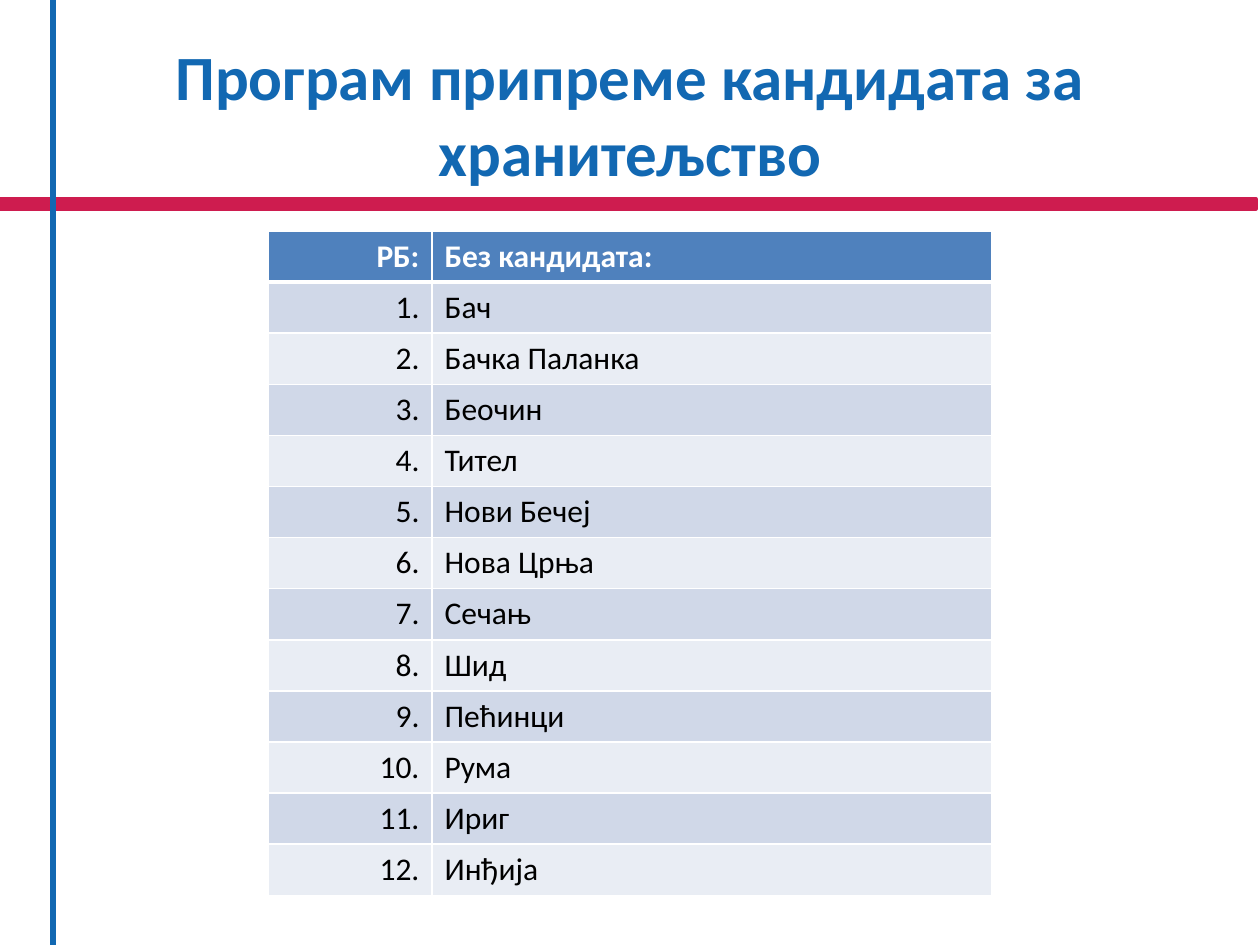
from pptx import Presentation
from pptx.dml.color import RGBColor
from pptx.enum.shapes import MSO_CONNECTOR, MSO_SHAPE
from pptx.enum.text import MSO_ANCHOR, PP_ALIGN
from pptx.oxml import parse_xml
from pptx.oxml.ns import nsdecls
from pptx.util import Emu, Pt

EMU_PER_PX = 914400 / 126
WIDTH, HEIGHT = 1260, 945

WHITE = RGBColor(0xFF, 0xFF, 0xFF)
BLACK = RGBColor(0x00, 0x00, 0x00)
BLUE = RGBColor(0x12, 0x68, 0xB2)
RED = RGBColor(0xCE, 0x1C, 0x4F)
HEADER_FILL = RGBColor(0x4F, 0x81, 0xBD)
BAND_FILLS = RGBColor(0xD0, 0xD8, 0xE8), RGBColor(0xE9, 0xED, 0xF4)

FONT = "Calibri"
TITLE = {"size": Pt(36), "bold": True}
HEADER = {"size": Pt(18), "bold": True}
BODY = {"size": Pt(18), "bold": False}

MUNICIPALITIES = [
    "Бач", "Бачка Паланка", "Беочин", "Тител", "Нови Бечеј", "Нова Црња",
    "Сечањ", "Шид", "Пећинци", "Рума", "Ириг", "Инђија",
]


def px(*lengths):
    return [Emu(round(length * EMU_PER_PX)) for length in lengths]


class SlideBuilder:
    def __init__(self, deck, font):
        self.font = font
        self.slide = deck.slides.add_slide(deck.slide_layouts[5])

    def add_text(self, frame, text, style, color, align):
        para = frame.paragraphs[0]
        para.alignment = align
        span = para.add_run()
        span.text = text
        span.font.name = self.font
        span.font.color.rgb = color
        for name, value in style.items():
            setattr(span.font, name, value)

    def title(self, text, left, top, width, height):
        box = self.slide.shapes.title
        box.left, box.top, box.width, box.height = px(left, top, width, height)
        box.text_frame.word_wrap = True
        box.text_frame.vertical_anchor = MSO_ANCHOR.MIDDLE
        self.add_text(box.text_frame, text, TITLE, BLUE, PP_ALIGN.CENTER)

    def bar(self, left, top, width, height, color):
        box = self.slide.shapes.add_shape(
            MSO_SHAPE.RECTANGLE, *px(left, top, width, height))
        box.shadow.inherit = False
        box.fill.solid()
        box.fill.fore_color.rgb = color
        box.line.color.rgb = color
        box.line.width = Pt(2)

    def line(self, x1, y1, x2, y2, color, weight):
        rule = self.slide.shapes.add_connector(
            MSO_CONNECTOR.STRAIGHT, *px(x1, y1, x2, y2))
        rule.line.color.rgb = color
        rule.line.width = Pt(weight)
        rule._element.spPr.append(
            parse_xml(f"<a:effectLst {nsdecls('a')}/>"))

    def cell_borders(self, cell, weights):
        """Insert white borders ahead of the fill; weights maps side to points."""
        props = cell._tc.get_or_add_tcPr()
        for index, (side, weight) in enumerate(weights.items()):
            props.insert(index, parse_xml(
                f'<a:ln{side} {nsdecls("a")} w="{Pt(weight)}"><a:solidFill>'
                f'<a:srgbClr val="{WHITE}"/></a:solidFill></a:ln{side}>'))

    def table(self, rows, left, top, column_widths, row_height):
        frame = self.slide.shapes.add_table(
            len(rows), len(column_widths),
            *px(left, top, sum(column_widths), row_height * len(rows)))
        grid = frame.table
        for column, width in zip(grid.columns, px(*column_widths)):
            column.width = width
        aligns = PP_ALIGN.RIGHT, PP_ALIGN.LEFT
        for index, values in enumerate(rows):
            grid.rows[index].height = px(row_height)[0]
            is_header = index == 0
            style, color = (HEADER, WHITE) if is_header else (BODY, BLACK)
            fill = HEADER_FILL if is_header else BAND_FILLS[(index - 1) % 2]
            weights = {"L": 1, "R": 1, "T": 3 if index == 1 else 1,
                       "B": 3 if is_header else 1}
            for cell, text, align in zip(grid.rows[index].cells, values, aligns):
                cell.fill.solid()
                cell.fill.fore_color.rgb = fill
                self.cell_borders(cell, weights)
                self.add_text(cell.text_frame, text, style, color, align)


def main():
    deck = Presentation()
    deck.slide_width, deck.slide_height = px(WIDTH, HEIGHT)
    page = SlideBuilder(deck, FONT)
    page.bar(-4, 199, WIDTH, 10, RED)
    page.line(53, 0, 53, HEIGHT, BLUE, 3)
    page.title("Програм припреме кандидата за хранитељство", 63, 38, 1134, 151)
    rows = [("РБ:", "Без кандидата:")]
    rows += [(f"{number}.", name)
             for number, name in enumerate(MUNICIPALITIES, start=1)]
    page.table(rows, 268, 231, [164, 560], 51)
    deck.save("out.pptx")


if __name__ == "__main__":
    main()
